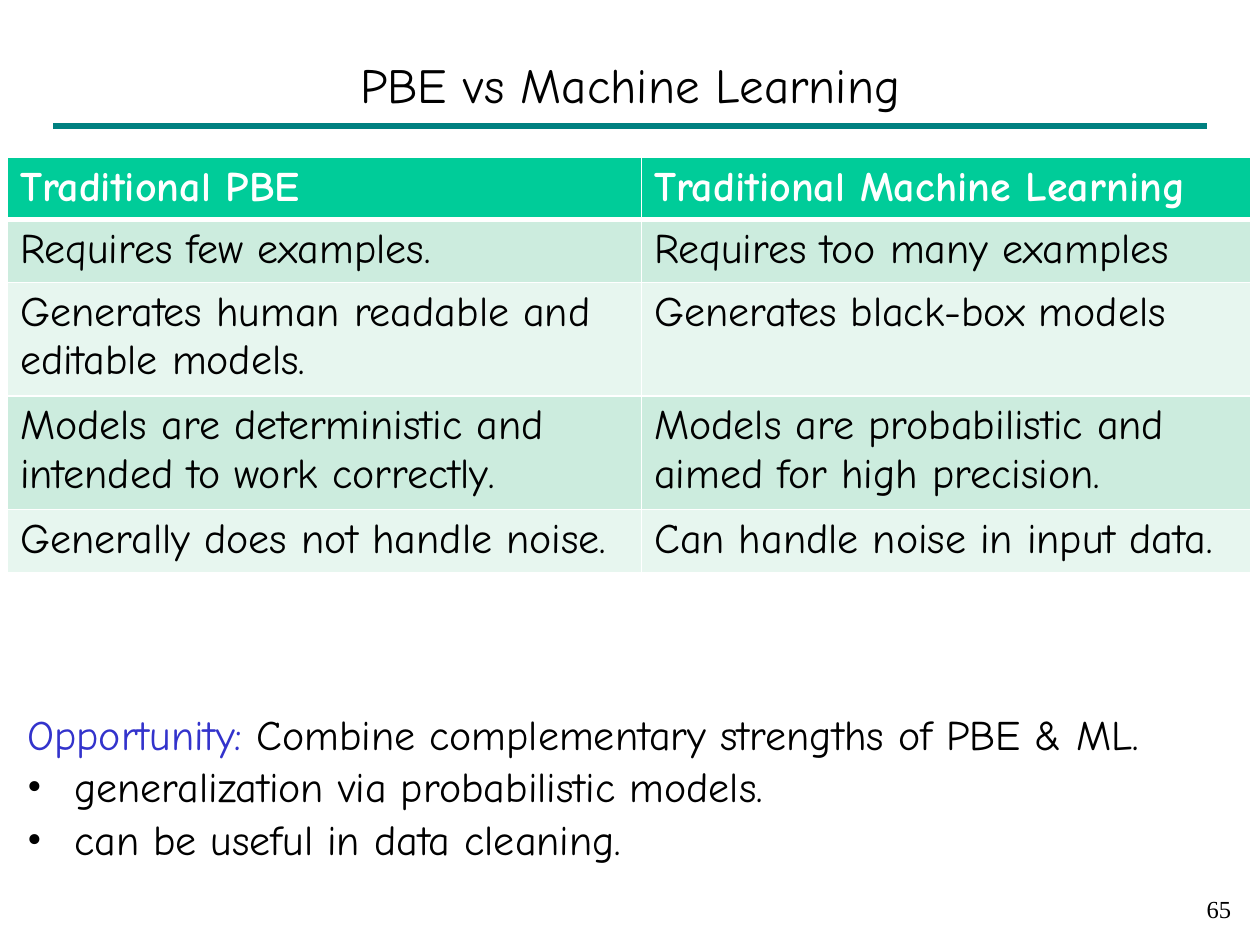
from dataclasses import dataclass

from lxml import etree
from pptx import Presentation
from pptx.dml.color import RGBColor
from pptx.enum.shapes import MSO_CONNECTOR
from pptx.enum.text import MSO_ANCHOR, PP_ALIGN
from pptx.oxml.ns import qn
from pptx.util import Cm, Pt

STRAIGHT = MSO_CONNECTOR.STRAIGHT
MIDDLE, TOP = MSO_ANCHOR.MIDDLE, MSO_ANCHOR.TOP
LEFT, CENTER, RIGHT = PP_ALIGN.LEFT, PP_ALIGN.CENTER, PP_ALIGN.RIGHT
TITLE_ONLY = 5


@dataclass(frozen=True)
class Theme:
    font: str = "Comic Neue"
    number_font: str = "Times New Roman"
    title_size: int = 28
    body_size: int = 24
    number_size: int = 14
    ink: str = "000000"
    white: str = "FFFFFF"
    accent: str = "3333CC"
    rule: str = "008080"
    header: str = "00CC99"
    bands: tuple = ("CCECDE", "E7F6EF")


THEME = Theme()

COMPARISON = [
    ("Traditional PBE", "Traditional Machine Learning"),
    ("Requires few examples.", "Requires too many examples"),
    ("Generates human readable and editable models.", "Generates black-box models"),
    ("Models are deterministic and intended to work correctly.",
     "Models are probabilistic and aimed for high precision."),
    ("Generally does not handle noise.", "Can handle noise in input data."),
]
ROW_HEIGHTS = (1.24, 1.27, 2.29, 2.29, 1.27)
LEFT_COLUMN_SHARE = 0.51
BENEFITS = ("generalization via probabilistic models.", "can be useful in data cleaning.")


def add_run(paragraph, text, size, color=THEME.ink, font=THEME.font, bold=False):
    run = paragraph.add_run()
    run.text = text
    run.font.size = Pt(size)
    run.font.name = font
    run.font.bold = bold
    run.font.color.rgb = RGBColor.from_string(color)


def add_bullet(paragraph, indent):
    properties = paragraph._p.get_or_add_pPr()
    properties.set("marL", str(indent))
    properties.set("indent", str(-indent))
    etree.SubElement(properties, qn("a:buFont"), typeface=THEME.number_font)
    etree.SubElement(properties, qn("a:buChar"), char="•")


def set_borders(cell, bottom_width):
    properties = cell._tc.get_or_add_tcPr()
    sides = {"a:lnL": 1, "a:lnR": 1, "a:lnT": 1, "a:lnB": bottom_width}
    for position, (side, width) in enumerate(sides.items()):
        border = etree.Element(qn(side), w=str(Pt(width)))
        fill = etree.SubElement(border, qn("a:solidFill"))
        etree.SubElement(fill, qn("a:srgbClr"), val=THEME.white)
        properties.insert(position, border)


def add_heading(slide, left, top, width, height):
    title = slide.shapes.title
    title.left, title.top, title.width, title.height = left, top, width, height
    title.text_frame.vertical_anchor = MIDDLE
    heading = title.text_frame.paragraphs[0]
    heading.alignment = CENTER
    add_run(heading, "PBE vs Machine Learning", THEME.title_size)

    overhang = Cm(0.83)
    bottom = top + height
    rule = slide.shapes.add_connector(
        STRAIGHT, left - overhang, bottom, left + width + overhang, bottom)
    rule.line.color.rgb = RGBColor.from_string(THEME.rule)
    rule.line.width = Pt(4)
    etree.SubElement(rule._element.spPr, qn("a:effectLst"))


def add_comparison(slide, left, top, width, height):
    table = slide.shapes.add_table(
        len(COMPARISON), len(COMPARISON[0]), left, top, width, height).table
    first_width = int(width * LEFT_COLUMN_SHARE)
    table.columns[0].width = first_width
    table.columns[1].width = width - first_width
    for row_index, row in enumerate(COMPARISON):
        is_header = row_index == 0
        table.rows[row_index].height = Cm(ROW_HEIGHTS[row_index])
        background = THEME.header if is_header else THEME.bands[(row_index - 1) % 2]
        ink = THEME.white if is_header else THEME.ink
        for column_index, statement in enumerate(row):
            cell = table.cell(row_index, column_index)
            cell.fill.solid()
            cell.fill.fore_color.rgb = RGBColor.from_string(background)
            set_borders(cell, 3 if is_header else 1)
            add_run(cell.text_frame.paragraphs[0], statement, THEME.body_size,
                    ink, bold=is_header)


def add_frame(slide, left, top, width, height):
    frame = slide.shapes.add_textbox(left, top, width, height).text_frame
    frame.word_wrap = True
    frame.vertical_anchor = TOP
    return frame


def add_opportunity(slide, left, top, width, height):
    frame = add_frame(slide, left, top, width, height)
    lead = frame.paragraphs[0]
    add_run(lead, "Opportunity: ", THEME.body_size, THEME.accent)
    add_run(lead, "Combine complementary strengths of PBE & ML.", THEME.body_size)
    for benefit in BENEFITS:
        item = frame.add_paragraph()
        add_bullet(item, Cm(0.95))
        add_run(item, benefit, THEME.body_size)
    for paragraph in frame.paragraphs:
        paragraph.alignment = LEFT
        paragraph.space_before = Pt(1.4)


def add_page_number(slide, left, top, width, height):
    number = add_frame(slide, left, top, width, height).paragraphs[0]
    number.alignment = RIGHT
    add_run(number, "65", THEME.number_size, font=THEME.number_font)


def main():
    deck = Presentation()
    deck.slide_width, deck.slide_height = Cm(25.4), Cm(19.05)
    slide = deck.slides.add_slide(deck.slide_layouts[TITLE_ONLY])
    add_heading(slide, Cm(1.9), Cm(0.84), Cm(21.6), Cm(1.7))
    add_comparison(slide, Cm(0.15), Cm(3.18), Cm(25.07), Cm(sum(ROW_HEIGHTS)))
    add_opportunity(slide, Cm(0.3), Cm(14.15), Cm(24.8), Cm(3.33))
    add_page_number(slide, Cm(19.79), Cm(17.9), Cm(5.28), Cm(1.07))
    deck.save("out.pptx")


if __name__ == "__main__":
    main()
